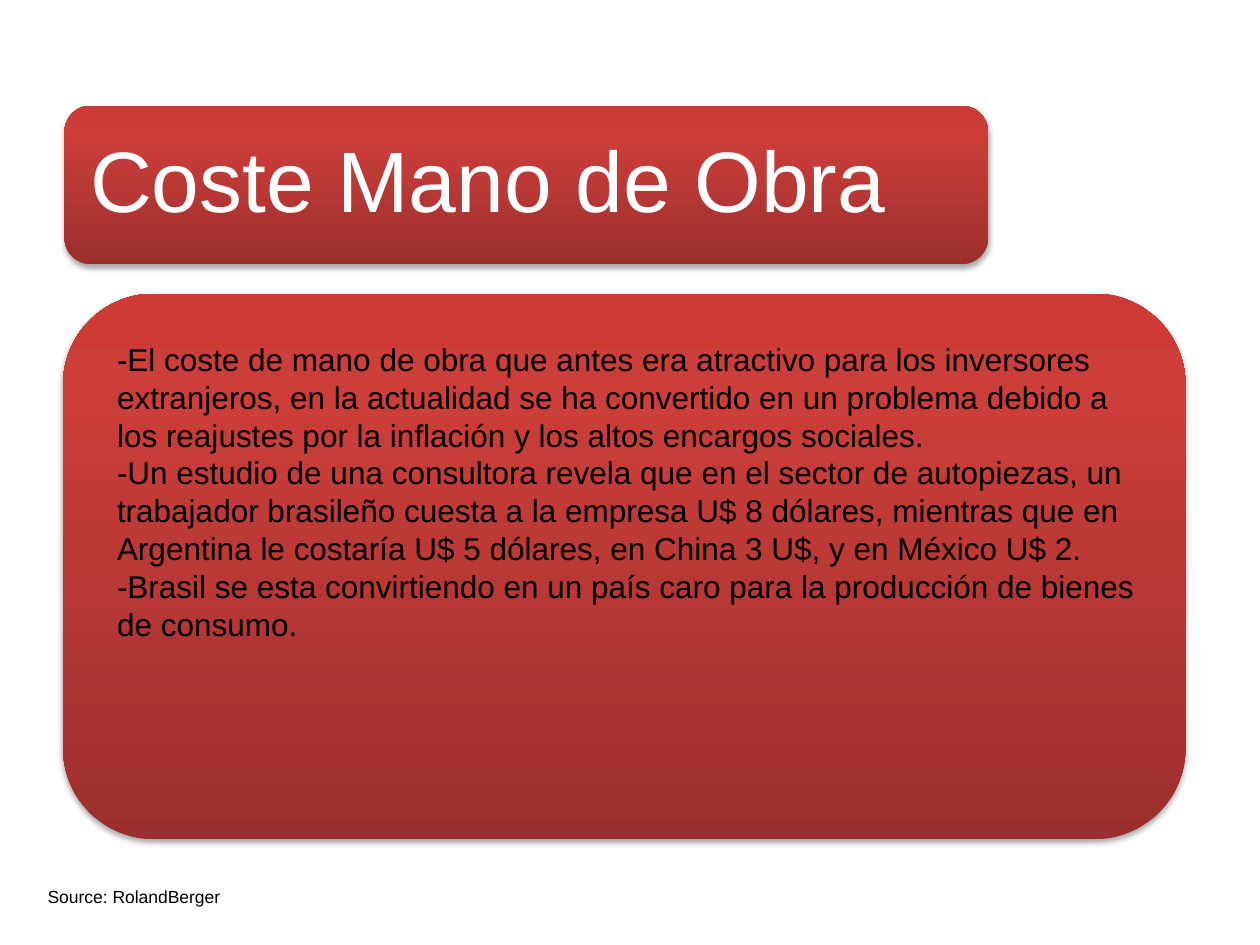
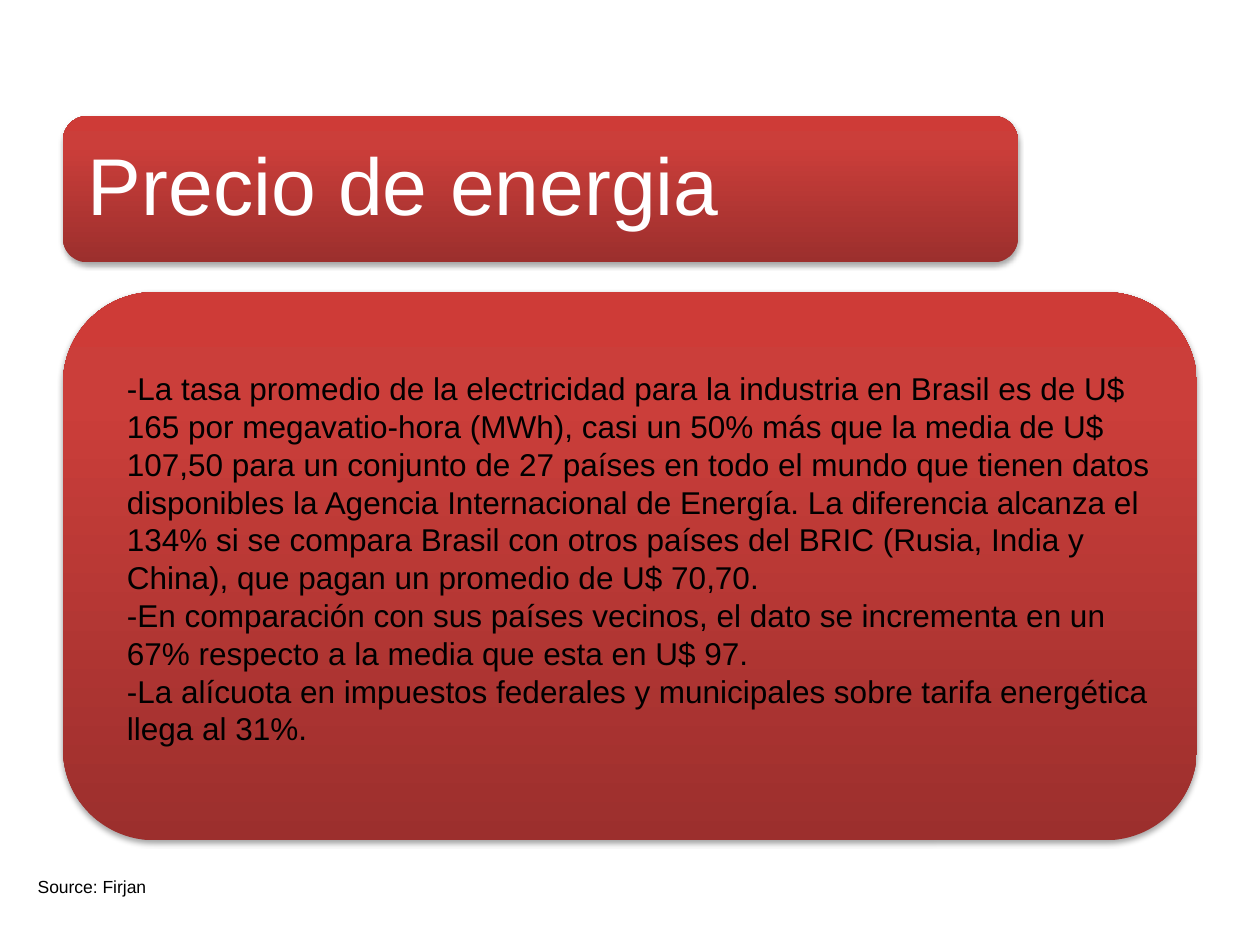
from dataclasses import dataclass

from lxml.etree import SubElement
from pptx import Presentation
from pptx.dml.color import RGBColor
from pptx.enum.shapes import MSO_SHAPE
from pptx.enum.text import MSO_ANCHOR, MSO_AUTO_SIZE, PP_ALIGN
from pptx.oxml.ns import qn
from pptx.util import Cm, Pt


@dataclass(frozen=True)
class Theme:
    """Colours, font and type sizes shared by the slides."""

    font: str = "Arial"
    title_color: str = "FFFFFF"
    text_color: str = "000000"
    gradient: tuple = ((0, "9C2F2D"), (80, "CB3E3A"), (100, "CE3B37"))
    shadow_color: str = "000000"
    body_size: int = 18
    source_size: int = 10


@dataclass(frozen=True)
class Box:
    """A rectangle in centimetres."""

    left: float
    top: float
    width: float
    height: float

    def inner(self, left, top, width, height):
        """Return a box placed relative to this one."""
        return Box(self.left + left, self.top + top, width, height)

    def lengths(self):
        """Return the four measures as lengths."""
        return Cm(self.left), Cm(self.top), Cm(self.width), Cm(self.height)


@dataclass(frozen=True)
class Topic:
    """The wording and layout of one topic slide."""

    title: str
    title_size: int
    title_box: Box
    panel_box: Box
    body_box: Box
    body: tuple
    source: str
    source_box: Box


THEME = Theme()

LABOUR_PANEL = Box(1.27, 5.92, 22.63, 11)
ENERGY_PANEL = Box(1.27, 5.89, 22.86, 11.05)

TOPICS = (
    Topic(
        title="Coste Mano de Obra",
        title_size=49,
        title_box=Box(1.3, 2.13, 18.62, 3.2),
        panel_box=LABOUR_PANEL,
        body_box=LABOUR_PANEL.inner(0.84, 0.81, 21.01, 6.4),
        body=(
            "-El coste de mano de obra que antes era atractivo para los "
            "inversores extranjeros, en la actualidad se ha convertido en un "
            "problema debido a los reajustes por la inflación y los altos "
            "encargos sociales.",
            "-Un estudio de una consultora revela que en el sector de "
            "autopiezas, un trabajador brasileño cuesta a la empresa U$ 8 "
            "dólares, mientras que en Argentina le costaría U$ 5 dólares, en "
            "China 3 U$, y en México U$ 2.",
            "-Brasil se esta convirtiendo en un país caro para la producción "
            "de bienes de consumo.",
        ),
        source="Source: RolandBerger",
        source_box=Box(0.71, 17.73, 7.8, 0.69),
    ),
    Topic(
        title="Precio de energia",
        title_size=46,
        title_box=Box(1.27, 2.34, 19.25, 2.95),
        panel_box=ENERGY_PANEL,
        body_box=ENERGY_PANEL.inner(1.04, 1.43, 21.21, 7.95),
        body=(
            "-La tasa promedio de la electricidad para la industria en Brasil "
            "es de U$ 165 por megavatio-hora (MWh), casi un 50% más que la "
            "media de U$ 107,50 para un conjunto de 27 países en todo el "
            "mundo que tienen datos disponibles la Agencia Internacional de "
            "Energía. La diferencia alcanza el 134% si se compara Brasil con "
            "otros países del BRIC (Rusia, India y China), que pagan un "
            "promedio de U$ 70,70.",
            "-En comparación con sus países vecinos, el dato se incrementa en "
            "un 67% respecto a la media que esta en U$ 97.",
            "-La alícuota en impuestos federales y municipales sobre tarifa "
            "energética llega al 31%.",
        ),
        source="Source: Firjan",
        source_box=Box(0.51, 17.53, 6.2, 0.69),
    ),
)


def add_color(parent, color, alpha=None):
    """Append an RGB colour, optionally transparent, to an XML element."""
    element = SubElement(parent, qn("a:srgbClr"), val=color)
    if alpha is not None:
        SubElement(element, qn("a:alpha"), val=str(alpha * 1000))


def apply_gradient(shape):
    """Fill a shape with the theme gradient, darkest at the bottom."""
    shape.fill.gradient()
    shape.fill.gradient_angle = 90
    stops = shape.element.spPr.find(".//" + qn("a:gsLst"))
    for stop in list(stops):
        stops.remove(stop)
    for position, color in THEME.gradient:
        stop = SubElement(stops, qn("a:gs"), pos=str(position * 1000))
        add_color(stop, color)


def apply_shadow(shape):
    """Give a shape a soft shadow falling straight down."""
    shape.shadow.inherit = False
    effects = shape.element.spPr.find(qn("a:effectLst"))
    shadow = SubElement(
        effects, qn("a:outerShdw"), blurRad=str(Pt(3.1)), dist=str(Pt(1.8)),
        dir="5400000", rotWithShape="0",
    )
    add_color(shadow, THEME.shadow_color, 35)


def add_panel(slide, box):
    """Add a rounded red panel."""
    shape = slide.shapes.add_shape(MSO_SHAPE.ROUNDED_RECTANGLE, *box.lengths())
    apply_gradient(shape)
    shape.line.fill.background()
    apply_shadow(shape)
    return shape


def write_paragraph(paragraph, text, size, color):
    """Write one left-aligned run in the theme font."""
    paragraph.alignment = PP_ALIGN.LEFT
    run = paragraph.add_run()
    run.text = text
    run.font.name = THEME.font
    run.font.size = Pt(size)
    run.font.color.rgb = RGBColor.from_string(color)


def add_title(slide, box, text, size):
    """Add the title band with its text."""
    frame = add_panel(slide, box).text_frame
    frame.word_wrap = True
    frame.vertical_anchor = MSO_ANCHOR.MIDDLE
    frame.margin_left = frame.margin_right = Cm(0.36)
    frame.margin_top = frame.margin_bottom = Cm(0.36)
    paragraph = frame.paragraphs[0]
    paragraph.line_spacing = 0.9
    write_paragraph(paragraph, text, size, THEME.title_color)


def add_text(slide, box, texts, size):
    """Add a text box with one paragraph for each text."""
    frame = slide.shapes.add_textbox(*box.lengths()).text_frame
    frame.word_wrap = True
    frame.auto_size = MSO_AUTO_SIZE.SHAPE_TO_FIT_TEXT
    for index, text in enumerate(texts):
        paragraph = frame.add_paragraph() if index else frame.paragraphs[0]
        write_paragraph(paragraph, text, size, THEME.text_color)


def add_topic_slide(presentation, topic):
    """Add a slide with a title band, a text panel and a source."""
    slide = presentation.slides.add_slide(presentation.slide_layouts[6])
    add_title(slide, topic.title_box, topic.title, topic.title_size)
    add_panel(slide, topic.panel_box)
    add_text(slide, topic.body_box, topic.body, THEME.body_size)
    add_text(slide, topic.source_box, (topic.source,), THEME.source_size)


def main():
    """Build and save the presentation."""
    presentation = Presentation()
    presentation.slide_width = Cm(25.4)
    presentation.slide_height = Cm(19.05)
    for topic in TOPICS:
        add_topic_slide(presentation, topic)
    presentation.save("out.pptx")


if __name__ == "__main__":
    main()
